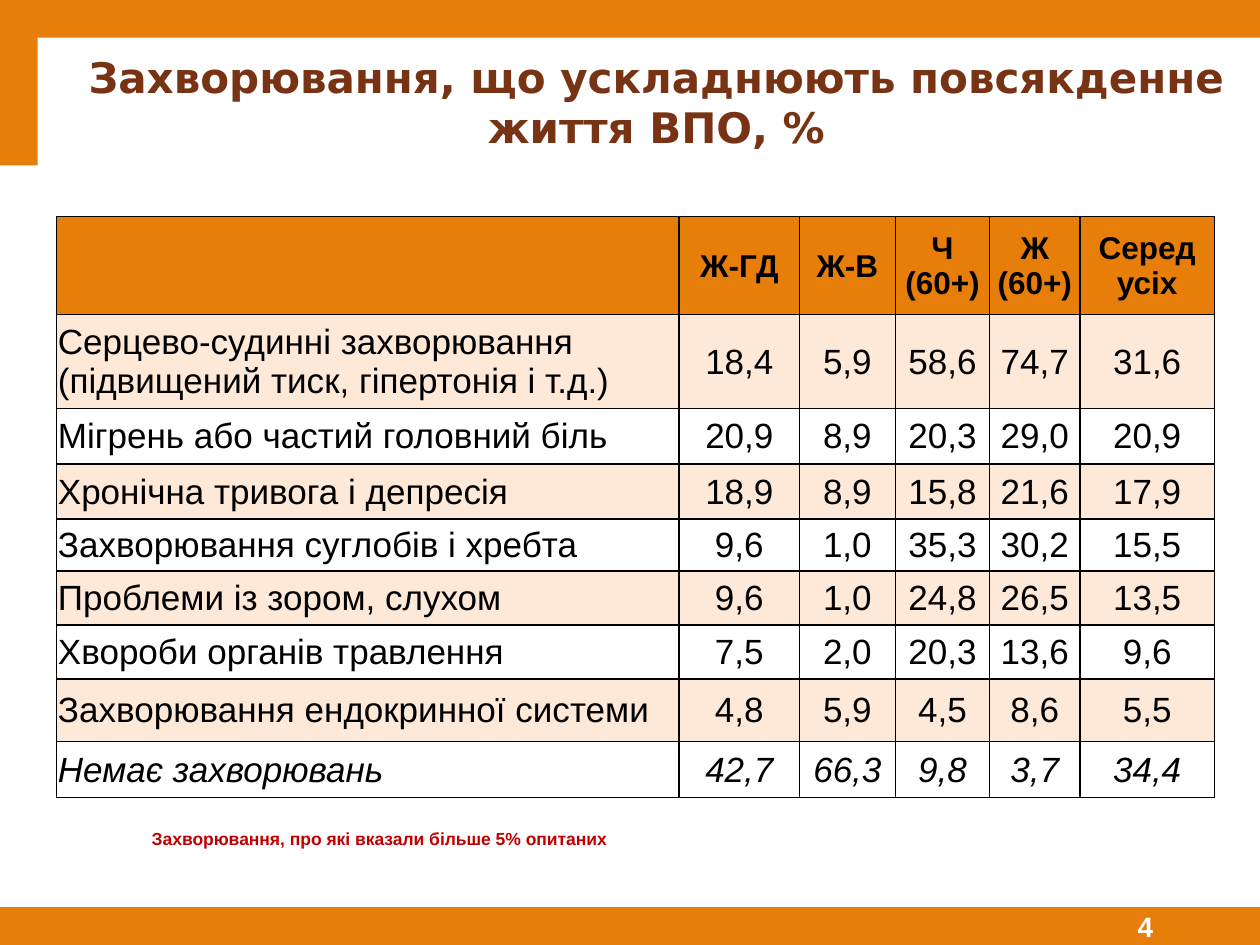
from lxml.etree import SubElement
from pptx import Presentation
from pptx.dml.color import RGBColor
from pptx.enum.shapes import MSO_SHAPE
from pptx.enum.text import MSO_ANCHOR as ANCHOR, PP_ALIGN as ALIGN
from pptx.oxml import parse_xml
from pptx.oxml.ns import nsdecls, qn
from pptx.util import Pt

ORANGE = RGBColor(0xE8, 0x7E, 0x0A)
PEACH = RGBColor(0xFA, 0x8D, 0x3D)
BROWN = RGBColor(0x77, 0x33, 0x13)
RED = RGBColor(0xC0, 0x00, 0x00)
BLACK = RGBColor(0x00, 0x00, 0x00)
WHITE = RGBColor(0xFF, 0xFF, 0xFF)


def write(tf, text, size, color=BLACK, font="Arial", bold=False, italic=False,
          align=ALIGN.CENTER):
    tf.word_wrap = True
    p = tf.paragraphs[0]
    p.alignment = align
    r = p.add_run()
    r.text = text
    r.font.name, r.font.size = font, Pt(size)
    r.font.bold, r.font.italic = bold, italic
    r.font.color.rgb = color


def add_borders(cell):
    tcPr = cell._tc.get_or_add_tcPr()
    for side in "LRTB":
        tcPr.append(parse_xml(
            f'<a:ln{side} {nsdecls("a")} w="{Pt(1)}"><a:solidFill>'
            f'<a:srgbClr val="{BLACK}"/></a:solidFill></a:ln{side}>'))


prs = Presentation()
prs.slide_width, prs.slide_height = Pt(720), Pt(540)
s = prs.slides.add_slide(prs.slide_layouts[5])

# Orange frame; the last bar carries the page number
bars = [
    (0, 518.4, 131.8, 21.6),
    (123, 518.4, 472.5, 21.6),
    (0, 0, 720, 21.6),
    (0, 21, 21.6, 73.5),
    (589, 518.4, 131, 21.6),
]
for box in bars:
    sp = s.shapes.add_shape(MSO_SHAPE.RECTANGLE, *map(Pt, box))
    sp.shadow.inherit = False
    sp.fill.solid()
    sp.fill.fore_color.rgb = ORANGE
    sp.line.fill.background()
tf = sp.text_frame
tf.vertical_anchor = ANCHOR.MIDDLE
tf.margin_top = tf.margin_bottom = 0
tf.margin_right = Pt(61)
write(tf, "4", 16, WHITE, bold=True, align=ALIGN.RIGHT)

# Title
title = s.shapes.title
title.left, title.top, title.width, title.height = map(Pt, (21.6, 21.6, 698.4, 72.7))
tf = title.text_frame
tf.vertical_anchor = ANCHOR.MIDDLE
tf.margin_left, tf.margin_right = Pt(15.8), Pt(7.2)
tf.margin_top = tf.margin_bottom = Pt(3.6)
write(tf, "Захворювання, що ускладнюють повсякденне життя ВПО, %", 24, BROWN,
      "DejaVu Sans", bold=True)

# Table of diseases by group
rows = [
    ("", "Ж-ГД", "Ж-В", "Ч (60+)", "Ж (60+)", "Серед усіх"),
    ("Серцево-судинні захворювання (підвищений тиск, гіпертонія і т.д.)",
     "18,4", "5,9", "58,6", "74,7", "31,6"),
    ("Мігрень або частий головний біль", "20,9", "8,9", "20,3", "29,0", "20,9"),
    ("Хронічна тривога і депресія", "18,9", "8,9", "15,8", "21,6", "17,9"),
    ("Захворювання суглобів і хребта", "9,6", "1,0", "35,3", "30,2", "15,5"),
    ("Проблеми із зором, слухом", "9,6", "1,0", "24,8", "26,5", "13,5"),
    ("Хвороби органів травлення", "7,5", "2,0", "20,3", "13,6", "9,6"),
    ("Захворювання ендокринної системи", "4,8", "5,9", "4,5", "8,6", "5,5"),
    ("Немає захворювань", "42,7", "66,3", "9,8", "3,7", "34,4"),
]
widths = [355.7, 68.8, 54.7, 54, 51.5, 77]
heights = [55.8, 53.8, 31.8, 31.6, 29.6, 30.8, 30.8, 35.8, 32]
tbl = s.shapes.add_table(len(rows), len(widths), Pt(32.4), Pt(123.8),
                         Pt(sum(widths)), Pt(sum(heights))).table
tbl.horz_banding = False
for col, width in zip(tbl.columns, widths):
    col.width = Pt(width)
for i, (row, height) in enumerate(zip(rows, heights)):
    tbl.rows[i].height = Pt(height)
    header, last = i == 0, i == len(rows) - 1
    for j, text in enumerate(row):
        cell = tbl.cell(i, j)
        cell.vertical_anchor = ANCHOR.MIDDLE
        cell.margin_left = cell.margin_right = cell.margin_top = Pt(0.7)
        cell.margin_bottom = 0
        add_borders(cell)
        if header or i % 2:
            cell.fill.solid()
            cell.fill.fore_color.rgb = ORANGE if header else PEACH
        else:
            cell.fill.background()
        if i % 2:
            # Odd rows are tinted at 20 % opacity
            clr = cell._tc.tcPr.find(qn("a:solidFill")).find(qn("a:srgbClr"))
            SubElement(clr, qn("a:alpha")).set("val", "20000")
        if text:
            write(cell.text_frame, text, 18 if header else 20, bold=header,
                  italic=last, align=ALIGN.CENTER if j else ALIGN.LEFT)

# Footnote
note = s.shapes.add_textbox(Pt(31.7), Pt(469.4), Pt(370), Pt(19.4))
write(note.text_frame, "Захворювання, про які вказали більше 5% опитаних", 10,
      RED, bold=True)

prs.save("out.pptx")
